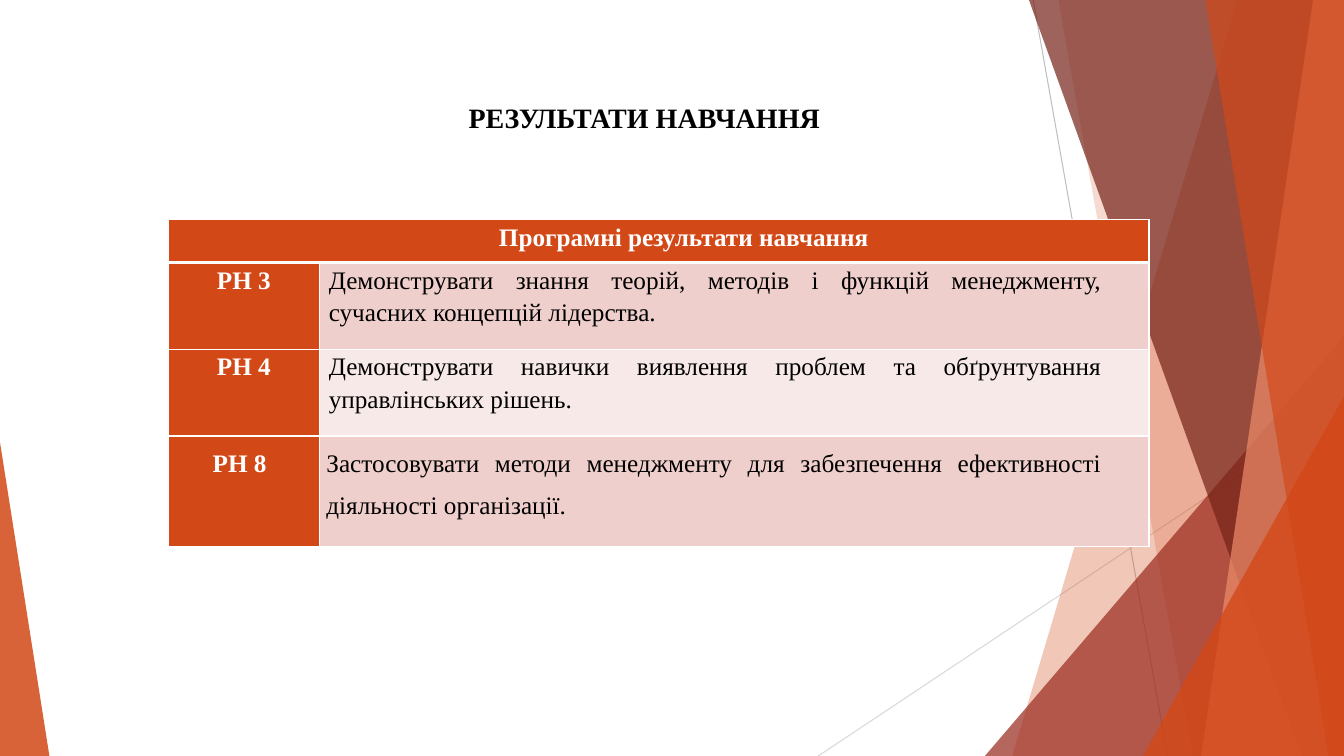
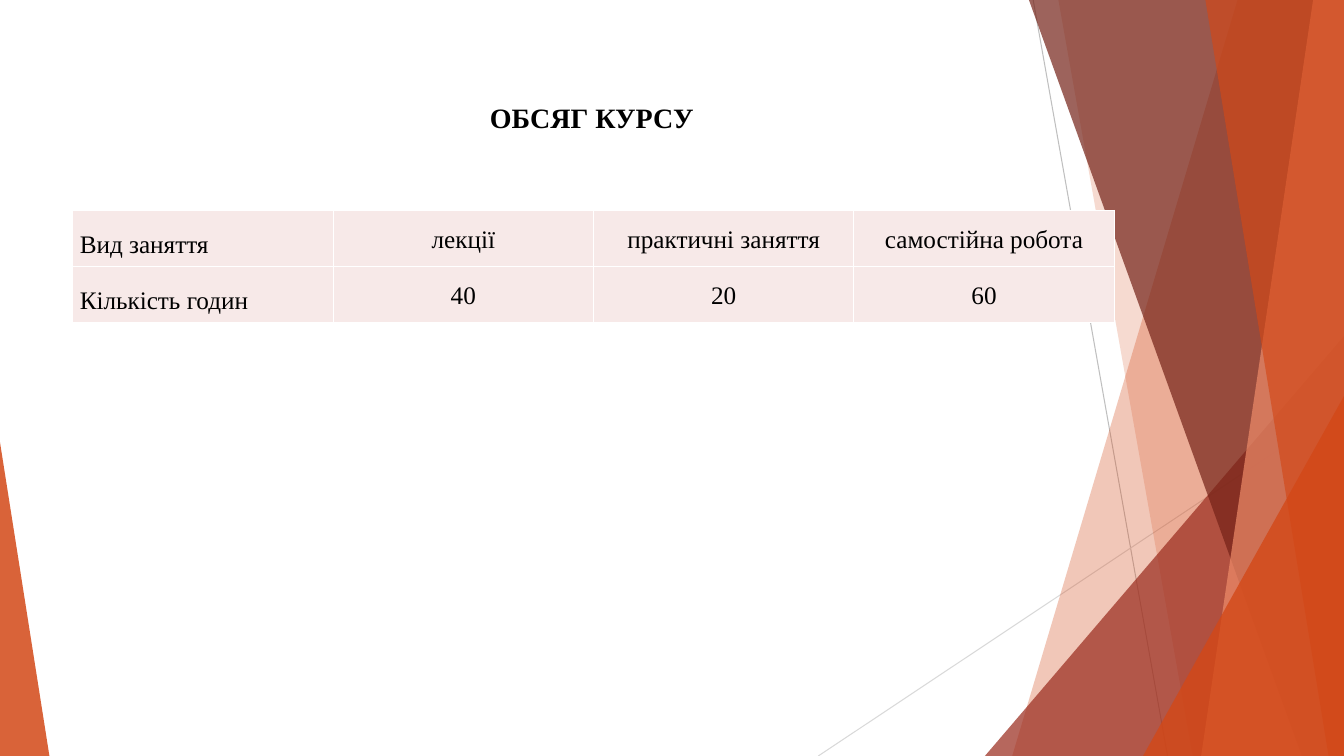
"""Build two course slides: learning outcomes and course volume."""
from lxml import etree
from pptx import Presentation
from pptx import util as u
from pptx.dml.color import RGBColor
from pptx.enum import shapes, text
from pptx.oxml.ns import qn

Pt = u.Pt
ALIGN = text.PP_ALIGN
FONT = "Times New Roman"
WIDTH, HEIGHT = 960, 540
ORANGE, RED, BROWN, PEACH = "D34817", "9B2D1F", "742217", "EF8C6A"
ROSE, PALE, WHITE, BLACK = "EFCFCC", "F7E9E8", "FFFFFF", "000000"

RAYS = [
    ((738, 0, 834, HEIGHT), "BFBFBF"),
    ((WIDTH, 290, 584.5, HEIGHT), "D9D9D9"),
]
# PANELS
PANELS = [
    ("band", (884, 723), ORANGE, 30),
    ("band", (756, 852), ORANGE, 20),
    ("triangle", (703.5, 240, WIDTH, 1), RED, 72),
    ("band", (735, 929.5), BROWN, 70),
    ("band", (938, 858), PEACH, 70),
    ("band", (861, 949), ORANGE, 65),
    ("triangle", (816.5, 283, WIDTH, 1), ORANGE, 80),
    ("triangle", (0, 316, 35.3, 0), ORANGE, 85),
]


def cell_style(fill, color, align, spacing, margins, bold=False):
    """Describe a cell; margins run left, top, right, bottom."""
    return dict(fill=fill, color=color, align=align, spacing=spacing,
                margins=margins, bold=bold)


HEADER = cell_style(ORANGE, WHITE, ALIGN.CENTER, 1.15, (41, 0, 5, 0), True)
CODE = cell_style(ORANGE, WHITE, ALIGN.CENTER, 1.15, (5, 0, 5, 0), True)
LAST_CODE = cell_style(ORANGE, WHITE, ALIGN.CENTER, 1.5, (5, 0, 11, 0), True)
ROSE_OUTCOME = cell_style(ROSE, BLACK, ALIGN.JUSTIFY, 1.15, (6.7, 0, 34, 0))
PALE_OUTCOME = {**ROSE_OUTCOME, "fill": PALE}
LAST_OUTCOME = cell_style(ROSE, BLACK, ALIGN.JUSTIFY, 1.5, (5, 0, 34, 0))
LABEL = cell_style(PALE, BLACK, ALIGN.JUSTIFY, 1.5, (5, 5, 5, 5))
VALUE = cell_style(PALE, BLACK, ALIGN.CENTER, 1.5, (1, 1, 1, 1))
VOLUME_STYLES = [LABEL] + [VALUE] * 3

SLIDES = [
    dict(
        title="РЕЗУЛЬТАТИ НАВЧАННЯ", title_left=327.5, title_width=267,
        left=120.2, top=157, columns=[108, 592.5], heights=[30.5, 62, 62, 79],
        header=True,
        rows=[
            ["Програмні результати навчання", ""],
            ["РН 3", "Демонструвати знання теорій, методів і функцій "
                     "менеджменту, сучасних концепцій лідерства."],
            ["РН 4", "Демонструвати навички виявлення проблем та "
                     "обґрунтування управлінських рішень."],
            ["РН 8", "Застосовувати методи менеджменту для забезпечення "
                     "ефективності діяльності організації."],
        ],
        styles=[[HEADER, HEADER], [CODE, ROSE_OUTCOME],
                [CODE, PALE_OUTCOME], [LAST_CODE, LAST_OUTCOME]],
    ),
    dict(
        title="ОБСЯГ КУРСУ", title_left=342.7, title_width=161.5,
        left=52, top=150.3, columns=[186] * 4, heights=[40] * 2,
        header=False,
        rows=[
            ["Вид заняття", "лекції", "практичні заняття", "самостійна робота"],
            ["Кількість годин", "40", "20", "60"],
        ],
        styles=[VOLUME_STYLES, VOLUME_STYLES],
    ),
]


def rgb(value):
    """Turn a hex string into a colour."""
    return RGBColor.from_string(value)


def add_ray(slide, points, color):
    """Draw a thin line without a shadow."""
    ray = slide.shapes.add_connector(shapes.MSO_CONNECTOR.STRAIGHT,
                                     *(Pt(value) for value in points))
    ray.line.color.rgb = rgb(color)
    ray.line.width = Pt(0.75)
    etree.SubElement(ray.element.spPr, qn("a:effectLst"))
    return ray


def add_panel(slide, kind, geometry, color, opacity):
    """Draw a translucent band or triangle reaching the slide's bottom."""
    if kind == "band":
        top_x, bottom_x = geometry
        builder = slide.shapes.build_freeform(top_x, 0, scale=Pt(1))
        builder.add_line_segments(
            [(WIDTH, 0), (WIDTH, HEIGHT), (bottom_x, HEIGHT)], close=True)
        panel = builder.convert_to_shape()
    else:
        left, top, right, apex = geometry
        panel = slide.shapes.add_shape(
            shapes.MSO_SHAPE.ISOSCELES_TRIANGLE,
            Pt(left), Pt(top), Pt(right - left), Pt(HEIGHT - top))
        panel.adjustments[0] = apex
    panel.shadow.inherit = False
    panel.line.fill.background()
    panel.fill.solid()
    panel.fill.fore_color.rgb = rgb(color)
    solid_color = panel.element.spPr.find(qn("a:solidFill")).find(qn("a:srgbClr"))
    etree.SubElement(solid_color, qn("a:alpha"), val=str(opacity * 1000))
    return panel


def decorate_layout(layout, slide):
    """Draw the shared decoration with the slide and move it to its layout."""
    decoration = [add_ray(slide, *ray) for ray in RAYS]
    decoration += [add_panel(slide, *panel) for panel in PANELS]
    for shape in decoration:
        layout.shapes.element.append(shape.element)


def set_title(slide, content):
    """Place and format the title placeholder."""
    title = slide.shapes.title
    title.left, title.top = Pt(content["title_left"]), Pt(68.4)
    title.width, title.height = Pt(content["title_width"]), Pt(55)
    frame = title.text_frame
    frame.text = content["title"]
    frame.word_wrap = False
    frame.auto_size = text.MSO_AUTO_SIZE.NONE
    frame.vertical_anchor = text.MSO_ANCHOR.TOP
    format_paragraph(frame.paragraphs[0], 20, BLACK, True, ALIGN.LEFT)


def format_paragraph(paragraph, size, color, bold, align):
    """Set a paragraph's font and alignment."""
    paragraph.alignment = align
    font = paragraph.font
    font.name, font.size, font.bold = FONT, Pt(size), bold
    font.color.rgb = rgb(color)


def set_borders(cell, bottom):
    """Give a cell white borders, with its own bottom width."""
    properties = cell._tc.get_or_add_tcPr()
    for index, (side, width) in enumerate(
            [("L", 1), ("R", 1), ("T", 1), ("B", bottom)]):
        border = etree.Element(qn(f"a:ln{side}"), w=str(Pt(width)))
        fill = etree.SubElement(border, qn("a:solidFill"))
        etree.SubElement(fill, qn("a:srgbClr"), val=WHITE)
        properties.insert(index, border)


def format_cell(cell, value, style, bottom):
    """Fill a cell with its text, colours, margins and borders."""
    cell.text = value
    cell.fill.solid()
    cell.fill.fore_color.rgb = rgb(style["fill"])
    (cell.margin_left, cell.margin_top, cell.margin_right,
     cell.margin_bottom) = (Pt(margin) for margin in style["margins"])
    paragraph = cell.text_frame.paragraphs[0]
    paragraph.line_spacing = style["spacing"]
    format_paragraph(paragraph, 18, style["color"], style["bold"], style["align"])
    set_borders(cell, bottom)


def add_table(slide, content):
    """Add the slide's table."""
    columns, heights = content["columns"], content["heights"]
    table = slide.shapes.add_table(
        len(heights), len(columns), Pt(content["left"]), Pt(content["top"]),
        Pt(sum(columns)), Pt(sum(heights))).table
    table.first_row = table.horz_banding = False
    for column, width in zip(table.columns, columns):
        column.width = Pt(width)
    for index, (row, height) in enumerate(zip(table.rows, heights)):
        row.height = Pt(height)
        bottom = 3 if content["header"] and index == 0 else 1
        for cell, value, style in zip(row.cells, content["rows"][index],
                                      content["styles"][index]):
            format_cell(cell, value, style, bottom)
    if content["header"]:
        table.cell(0, 0).merge(table.cell(0, len(columns) - 1))


def main():
    """Build and save the presentation."""
    presentation = Presentation()
    presentation.slide_width, presentation.slide_height = Pt(WIDTH), Pt(HEIGHT)
    layout = presentation.slide_layouts[5]
    for index, content in enumerate(SLIDES):
        slide = presentation.slides.add_slide(layout)
        if index == 0:
            decorate_layout(layout, slide)
        set_title(slide, content)
        add_table(slide, content)
    presentation.save("out.pptx")


if __name__ == "__main__":
    main()
